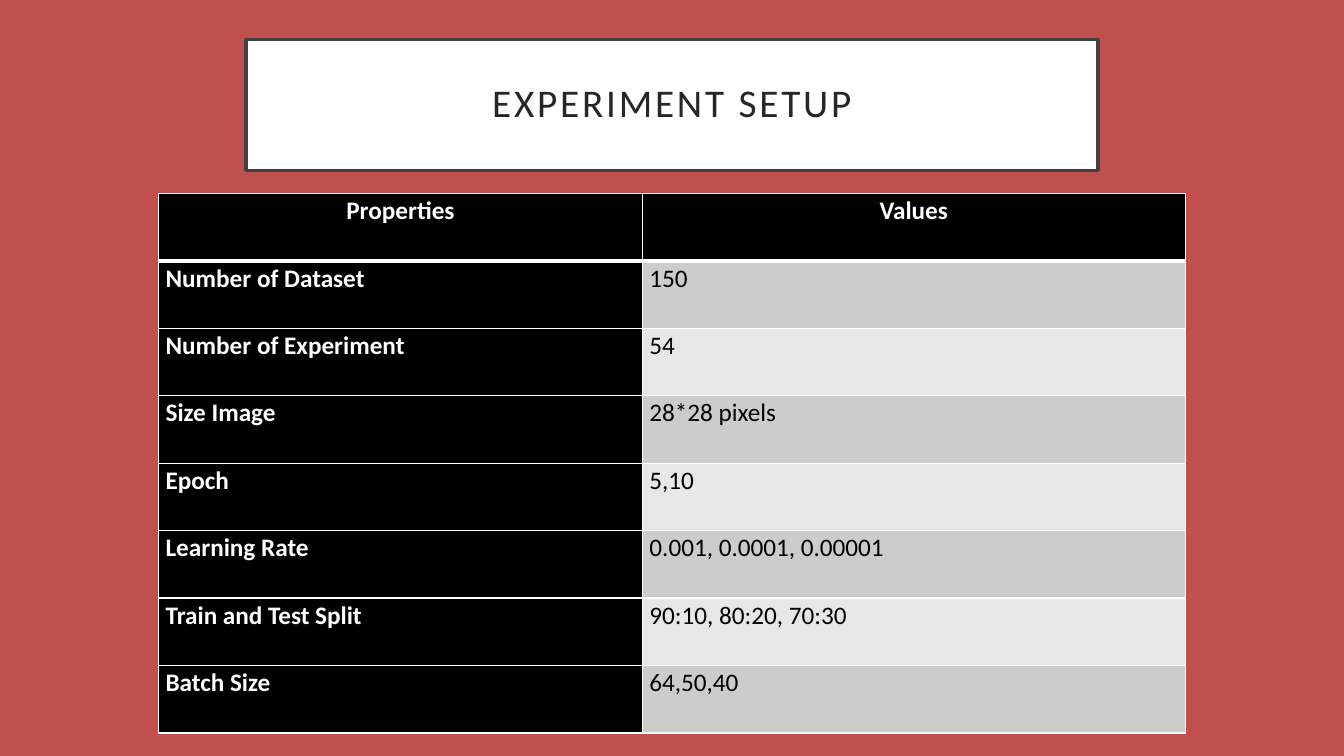
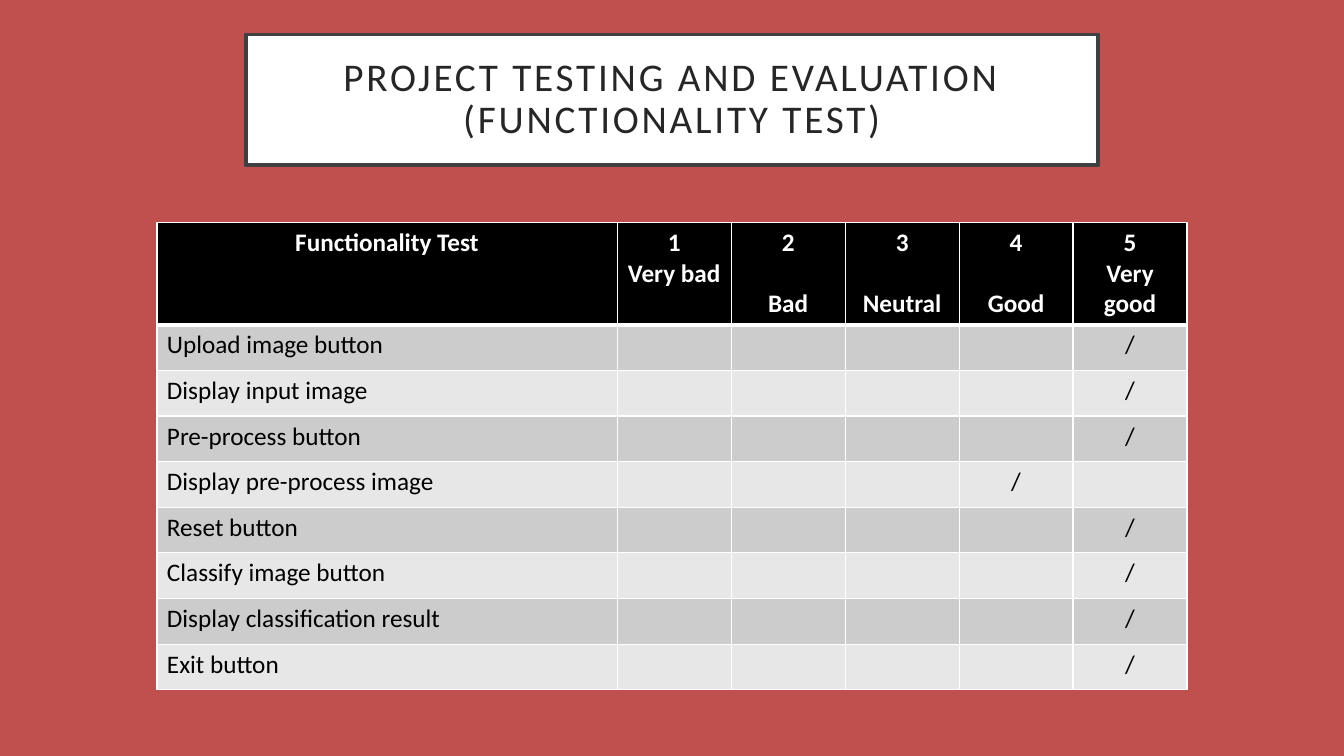
from lxml.etree import SubElement
from pptx import Presentation
from pptx.dml.color import RGBColor
from pptx.enum.shapes import MSO_SHAPE
from pptx.enum.text import MSO_ANCHOR, PP_ALIGN
from pptx.oxml.ns import qn
from pptx.util import Inches, Pt

RED = RGBColor(0xC0, 0x50, 0x4D)
WHITE = RGBColor(0xFF, 0xFF, 0xFF)
BLACK = RGBColor(0x00, 0x00, 0x00)
INK = RGBColor(0x26, 0x26, 0x26)
FRAME = RGBColor(0x40, 0x40, 0x40)
BANDS = (RGBColor(0xCC, 0xCC, 0xCC), RGBColor(0xE7, 0xE7, 0xE7))

FONT = "Calibri"
TITLE_SIZE, TABLE_SIZE = 28, 18
BLANK_LINE = Pt(22)  # height of one line of table text


class SlideBuilder:
    """Holds the style and the current slide; lengths are percent of the slide."""

    def __init__(self):
        self.deck = Presentation()
        self.deck.slide_width = Inches(13.33)
        self.deck.slide_height = Inches(7.5)
        self.page = None

    def across(self, share):
        return round(self.deck.slide_width * share / 100)

    def down(self, share):
        return round(self.deck.slide_height * share / 100)

    def new_page(self):
        self.page = self.deck.slides.add_slide(self.deck.slide_layouts[6])
        background = self.page.background.fill
        background.solid()
        background.fore_color.rgb = RED

    def style_span(self, span, size, color, bold=False):
        font = span.font
        font.name, font.size, font.bold = FONT, Pt(size), bold
        font.color.rgb = color

    def title(self, text, top, width=63.4, height=17.33):
        box = self.page.shapes.add_shape(
            MSO_SHAPE.RECTANGLE, self.across((100 - width) / 2), self.down(top),
            self.across(width), self.down(height))
        box.shadow.inherit = False
        box.fill.solid()
        box.fill.fore_color.rgb = WHITE
        box.line.color.rgb = FRAME
        box.line.width = Pt(2.5)
        frame = box.text_frame
        frame.word_wrap = True
        frame.vertical_anchor = MSO_ANCHOR.MIDDLE
        frame.margin_left = frame.margin_right = Inches(0.2)
        frame.margin_top = frame.margin_bottom = Inches(0.2)
        para = frame.paragraphs[0]
        para.text = text
        para.alignment = PP_ALIGN.CENTER
        para.line_spacing = 0.9
        for span in para.runs:
            self.style_span(span, TITLE_SIZE, INK)
            span.font._element.set("spc", "200")

    def borders(self, cell, top, bottom):
        properties = cell._tc.get_or_add_tcPr()
        for side, width in (("L", 1), ("R", 1), ("T", top), ("B", bottom)):
            line = SubElement(properties, qn(f"a:ln{side}"), w=str(Pt(width)))
            fill = SubElement(line, qn("a:solidFill"))
            SubElement(fill, qn("a:srgbClr"), val=str(WHITE))

    def cell(self, cell, text, fill, color, bold, centred, spacing, insets):
        cell.fill.solid()
        cell.fill.fore_color.rgb = fill
        if insets:
            cell.margin_left = cell.margin_right = Inches(insets[0])
            cell.margin_top = cell.margin_bottom = Inches(insets[1])
        cell.text_frame.text = text
        for para in cell.text_frame.paragraphs:
            para.alignment = PP_ALIGN.CENTER if centred else PP_ALIGN.LEFT
            para.line_spacing = spacing
            for span in para.runs:
                self.style_span(span, TABLE_SIZE, color, bold)

    def table(self, rows, top, columns, header_height, row_height,
              dark_labels=False, centred_values=False, spacing=1.0, insets=None):
        heights = [header_height] + [row_height] * (len(rows) - 1)
        width = sum(columns)
        table = self.page.shapes.add_table(
            len(rows), len(columns), self.across((100 - width) / 2),
            self.down(top), self.across(width), self.down(sum(heights))).table
        table.horz_banding = False
        for column, share in zip(table.columns, columns):
            column.width = self.across(share)
        for row, share in zip(table.rows, heights):
            row.height = self.down(share)
        for r, texts in enumerate(rows):
            for c, text in enumerate(texts):
                header = r == 0
                dark = header or (dark_labels and c == 0)
                cell = table.cell(r, c)
                self.borders(cell, 3 if r == 1 else 1, 3 if header else 1)
                self.cell(cell, text,
                          BLACK if dark else BANDS[(r - 1) % 2],
                          WHITE if dark else BLACK, dark,
                          header or (centred_values and c > 0), spacing, insets)
        return table


def setup_page(builder):
    builder.new_page()
    builder.title("EXPERIMENT SETUP", top=5.2)
    rows = [
        ("Properties", "Values"),
        ("Number of Dataset", "150"),
        ("Number of Experiment", "54"),
        ("Size Image", "28*28 pixels"),
        ("Epoch", "5,10"),
        ("Learning Rate", "0.001, 0.0001, 0.00001"),
        ("Train and Test Split", "90:10, 80:20, 70:30"),
        ("Batch Size", "64,50,40"),
    ]
    builder.table(rows, top=25.6, columns=[36, 40.4], header_height=8.92,
                  row_height=8.92, dark_labels=True, spacing=1.07,
                  insets=(0.07, 0))


def testing_page(builder):
    builder.new_page()
    builder.title("PROJECT TESTING AND EVALUATION\n(FUNCTIONALITY TEST)", top=4.53)
    grades = ["Very bad", "Bad", "Neutral", "Good", "Very good"]
    scores = {
        "Upload image button": 5,
        "Display input image": 5,
        "Pre-process button": 5,
        "Display pre-process image": 4,
        "Reset button": 5,
        "Classify image button": 5,
        "Display classification result": 5,
        "Exit button": 5,
    }
    numbers = range(1, len(grades) + 1)
    rows = [["Functionality Test"] + [f"{n}\n{g}" for n, g in zip(numbers, grades)]]
    rows += [[test] + ["/" if n == score else "" for n in numbers]
             for test, score in scores.items()]
    table = builder.table(rows, top=29.4, columns=[34.25] + [8.48] * len(grades),
                          header_height=13.47, row_height=6.04,
                          centred_values=True)
    # The middle grades stand one line lower
    for column in (2, 3, 4):
        table.cell(0, column).text_frame.paragraphs[1].space_before = BLANK_LINE


def main():
    builder = SlideBuilder()
    setup_page(builder)
    testing_page(builder)
    builder.deck.save("out.pptx")


if __name__ == "__main__":
    main()
